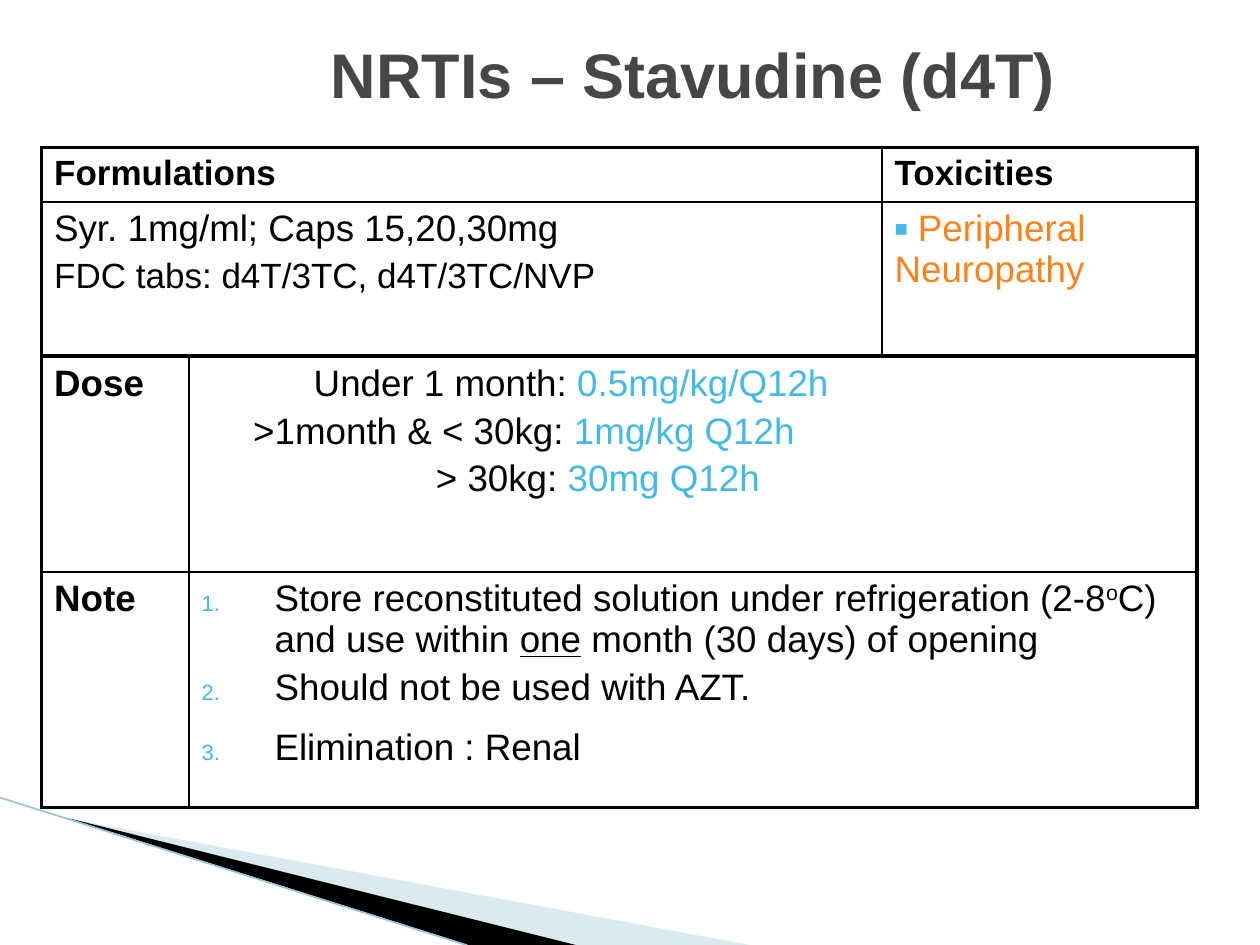
from dataclasses import dataclass

from lxml.etree import SubElement
from pptx import Presentation
from pptx.dml.color import RGBColor
from pptx.enum.shapes import MSO_CONNECTOR as Connector
from pptx.enum.text import MSO_ANCHOR as Anchor, PP_ALIGN as Align
from pptx.oxml.ns import qn
from pptx.util import Inches, Pt

COLORS = {"title": "464646", "text": "000000", "dose": "44B9E8", "toxicity": "FF8119",
          "band": "A0CBDC", "wedge": "000000", "edge": "97C5D8", "border": "000000"}
FONT = "Arial"
OUTER, INNER = 2.25, 1


@dataclass
class Span:
    text: str
    size: float = 21
    color: str = "text"
    bold: bool = False
    underline: bool = False
    raised: bool = False


@dataclass
class Para:
    spans: list[Span]
    margin: float = 0
    hanging: float = 0
    bullet: str = ""
    before: float = 4


@dataclass
class Grid:
    left: float
    top: float
    columns: list[float]
    rows: list[float]
    cells: list[list[list[Para]]]


def rgb(name: str) -> RGBColor:
    return RGBColor.from_string(COLORS[name])


def add_span(para, item: Span) -> None:
    span = para.add_run()
    span.text = item.text
    font = span.font
    font.name, font.size = FONT, Pt(item.size)
    font.bold, font.underline = item.bold, item.underline
    font.color.rgb = rgb(item.color)
    if item.raised:
        span._r.get_or_add_rPr().set("baseline", "30000")


def add_bullet(para, item: Para) -> None:
    """Mark a paragraph with a character, or with numbers when the bullet is "1."."""
    props = para._p.get_or_add_pPr()
    color = SubElement(props, qn("a:buClr"))
    SubElement(color, qn("a:srgbClr"), val=COLORS["dose"])
    SubElement(props, qn("a:buSzPct"), val="60000")
    SubElement(props, qn("a:buFont"), typeface=FONT)
    if item.bullet == "1.":
        SubElement(props, qn("a:buAutoNum"), type="arabicPeriod")
    else:
        SubElement(props, qn("a:buChar"), char=item.bullet)


def fill_frame(frame, items: list[Para]) -> None:
    for index, item in enumerate(items):
        para = frame.add_paragraph() if index else frame.paragraphs[0]
        props = para._p.get_or_add_pPr()
        props.set("marL", str(Inches(item.margin)))
        props.set("indent", str(Inches(-item.hanging)))
        if item.bullet:
            add_bullet(para, item)
        if index:
            para.space_before = Pt(item.before)
        for span in item.spans:
            add_span(para, span)


def add_border(cell, side: str, width: float) -> None:
    line = SubElement(cell._tc.get_or_add_tcPr(), qn(f"a:ln{side}"), w=str(Pt(width)))
    fill = SubElement(line, qn("a:solidFill"))
    SubElement(fill, qn("a:srgbClr"), val=COLORS["border"])


def draw_grid(page, grid: Grid) -> None:
    """Draw a table with a heavy frame and thin inner lines."""
    row_count, column_count = len(grid.rows), len(grid.columns)
    table = page.shapes.add_table(
        row_count, column_count, Inches(grid.left), Inches(grid.top),
        Inches(sum(grid.columns)), Inches(sum(grid.rows))).table
    table.first_row = table.horz_banding = False
    for column, width in zip(table.columns, grid.columns):
        column.width = Inches(width)
    for row, height in zip(table.rows, grid.rows):
        row.height = Inches(height)
    for r, contents in enumerate(grid.cells):
        for c, items in enumerate(contents):
            cell = table.cell(r, c)
            at_frame = {"L": c == 0, "R": c == column_count - 1,
                        "T": r == 0, "B": r == row_count - 1}
            for side, heavy in at_frame.items():
                add_border(cell, side, OUTER if heavy else INNER)
            cell.fill.background()
            fill_frame(cell.text_frame, items)


def draw_wedge(page, points: list[tuple[float, float]], color: str, alpha: int = 100) -> None:
    corners = [(Inches(x), Inches(y)) for x, y in points]
    builder = page.shapes.build_freeform(*corners[0])
    builder.add_line_segments(corners[1:], close=True)
    wedge = builder.convert_to_shape()
    wedge.shadow.inherit = False
    wedge.fill.solid()
    wedge.fill.fore_color.rgb = rgb(color)
    wedge.line.fill.background()
    if alpha < 100:
        tint = wedge._element.spPr.find(f"{qn('a:solidFill')}/{qn('a:srgbClr')}")
        SubElement(tint, qn("a:alpha"), val=str(alpha * 1000))


def draw_corner(page) -> None:
    draw_wedge(page, [(0.55, 6.5), (5.95, 7.5), (4.56, 7.5)], "band", 40)
    draw_wedge(page, [(0.53, 6.49), (4.57, 7.5), (3.72, 7.5)], "wedge")
    edge = page.shapes.add_connector(
        Connector.STRAIGHT, Inches(0), Inches(6.33), Inches(3.7), Inches(7.5))
    edge.line.color.rgb = rgb("edge")
    edge.line.width = Pt(0.95)
    SubElement(edge._element.spPr, qn("a:effectLst"))


def draw_title(page, text: str) -> None:
    box = page.shapes.add_textbox(Inches(1), Inches(0.17), Inches(9), Inches(0.83))
    frame = box.text_frame
    frame.word_wrap = True
    frame.vertical_anchor = Anchor.MIDDLE
    fill_frame(frame, [Para([Span(text, 36, "title", bold=True)])])
    frame.paragraphs[0].alignment = Align.CENTER


def heading(text: str, size: float = 21) -> list[Para]:
    return [Para([Span(text, size, bold=True)])]


def dose(group: str, amount: str, margin: float) -> Para:
    return Para([Span(f"{group}: "), Span(amount, color="dose")], margin)


def note(*spans: Span, before: float = 4) -> Para:
    return Para(list(spans), 0.58, 0.58, "1.", before)


DRUG_GRID = Grid(0.33, 1.17, [6.67, 2.5], [0.43, 1.22], [
    [heading("Formulations", 20), heading("Toxicities", 20)],
    [[Para([Span("Syr. 1mg/ml; Caps 15,20,30mg")]),
      Para([Span("FDC tabs: d4T/3TC, d4T/3TC/NVP", 20)])],
     [Para([Span(" Peripheral Neuropathy", color="toxicity")], bullet="■")]],
])

DOSE_GRID = Grid(0.33, 2.83, [1.17, 8], [1.71, 1.87], [
    [heading("Dose"),
     [dose("Under 1 month", "0.5mg/kg/Q12h", 0.89),
      dose(">1month & < 30kg", "1mg/kg Q12h", 0.41),
      dose("> 30kg", "30mg Q12h", 1.86)]],
    [heading("Note"),
     [note(Span("Store reconstituted solution under refrigeration (2-8"),
           Span("o", raised=True), Span("C) and use within "),
           Span("one", underline=True), Span(" month (30 days) of opening")),
      note(Span("Should not be used with AZT.")),
      note(Span("Elimination : Renal"), before=11)]],
])


def main() -> None:
    deck = Presentation()
    deck.slide_width, deck.slide_height = Inches(10), Inches(7.5)
    page = deck.slides.add_slide(deck.slide_layouts[6])
    draw_corner(page)
    draw_title(page, "NRTIs – Stavudine (d4T)")
    for grid in (DRUG_GRID, DOSE_GRID):
        draw_grid(page, grid)
    deck.save("out.pptx")


if __name__ == "__main__":
    main()
